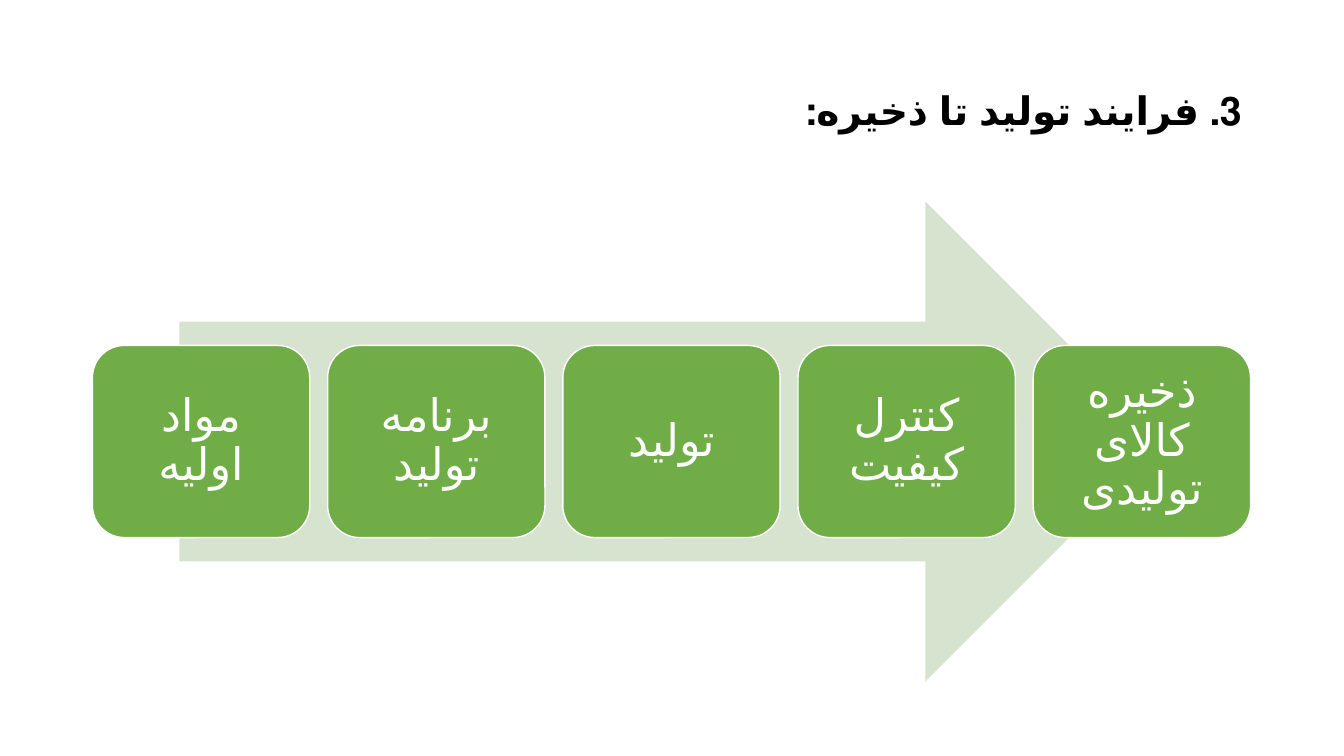
import pptx
import pptx.dml.color
import pptx.enum.lang
import pptx.enum.shapes
import pptx.enum.text
import pptx.util

PX = 9525
COLORS = {"title": "000000", "arrow": "D5E3CF", "step": "70AD47", "white": "FFFFFF"}
STEPS = ["مواد اولیه", "برنامه تولید", "تولید", "کنترل کیفیت", "ذخیره کالای تولیدی"]
STEP_LEFT, STEP_TOP, STEP_WIDTH, STEP_HEIGHT = 88, 329, 207, 183
STEP_PITCH = 224
STEP_INSET = 22

ALIGN = pptx.enum.text.PP_ALIGN
SHAPE = pptx.enum.shapes.MSO_SHAPE


def px(*lengths):
    return [length * PX for length in lengths]


def color(name):
    return pptx.dml.color.RGBColor.from_string(COLORS[name])


def write_text(box, text, size, color_name, align, bold=False):
    frame = box.text_frame
    frame.word_wrap = True
    frame.vertical_anchor = pptx.enum.text.MSO_ANCHOR.MIDDLE
    para = frame.paragraphs[0]
    span = para.add_run()
    span.text = text
    span.font.language_id = pptx.enum.lang.MSO_LANGUAGE_ID.FARSI
    para.alignment = align
    para.line_spacing = 0.9
    para.font.name = "Calibri"
    para.font.size = pptx.util.Pt(size)
    para.font.bold = bold
    para.font.color.rgb = color(color_name)
    return para


def add_title(page, text):
    box = page.shapes.add_textbox(*px(88, 38, 1104, 139))
    para = write_text(box, text, 28, "title", ALIGN.JUSTIFY, bold=True)
    para._p.get_or_add_pPr().set("rtl", "1")


def add_filled_shape(page, kind, fill, left, top, width, height):
    shape = page.shapes.add_shape(kind, *px(left, top, width, height))
    shape.shadow.inherit = False
    shape.fill.solid()
    shape.fill.fore_color.rgb = color(fill)
    shape.line.fill.background()
    return shape


def add_step(page, index, text):
    left = STEP_LEFT + index * STEP_PITCH
    box = add_filled_shape(page, SHAPE.ROUNDED_RECTANGLE, "step",
                           left, STEP_TOP, STEP_WIDTH, STEP_HEIGHT)
    box.line.color.rgb = color("white")
    box.line.width = pptx.util.Pt(1)
    frame = box.text_frame
    frame.margin_left = frame.margin_right = STEP_INSET * PX
    frame.margin_top = frame.margin_bottom = STEP_INSET * PX
    para = write_text(box, text, 32, "white", ALIGN.CENTER)
    para.space_after = pptx.util.Pt(11)


def main():
    deck = pptx.Presentation()
    deck.slide_width, deck.slide_height = px(1280, 720)
    page = deck.slides.add_slide(deck.slide_layouts[6])
    add_title(page, "3. فرایند تولید تا ذخیره:")
    add_filled_shape(page, SHAPE.RIGHT_ARROW, "arrow", 171, 192, 939, 457)
    for index, text in enumerate(STEPS):
        add_step(page, index, text)
    deck.save("out.pptx")


if __name__ == "__main__":
    main()
